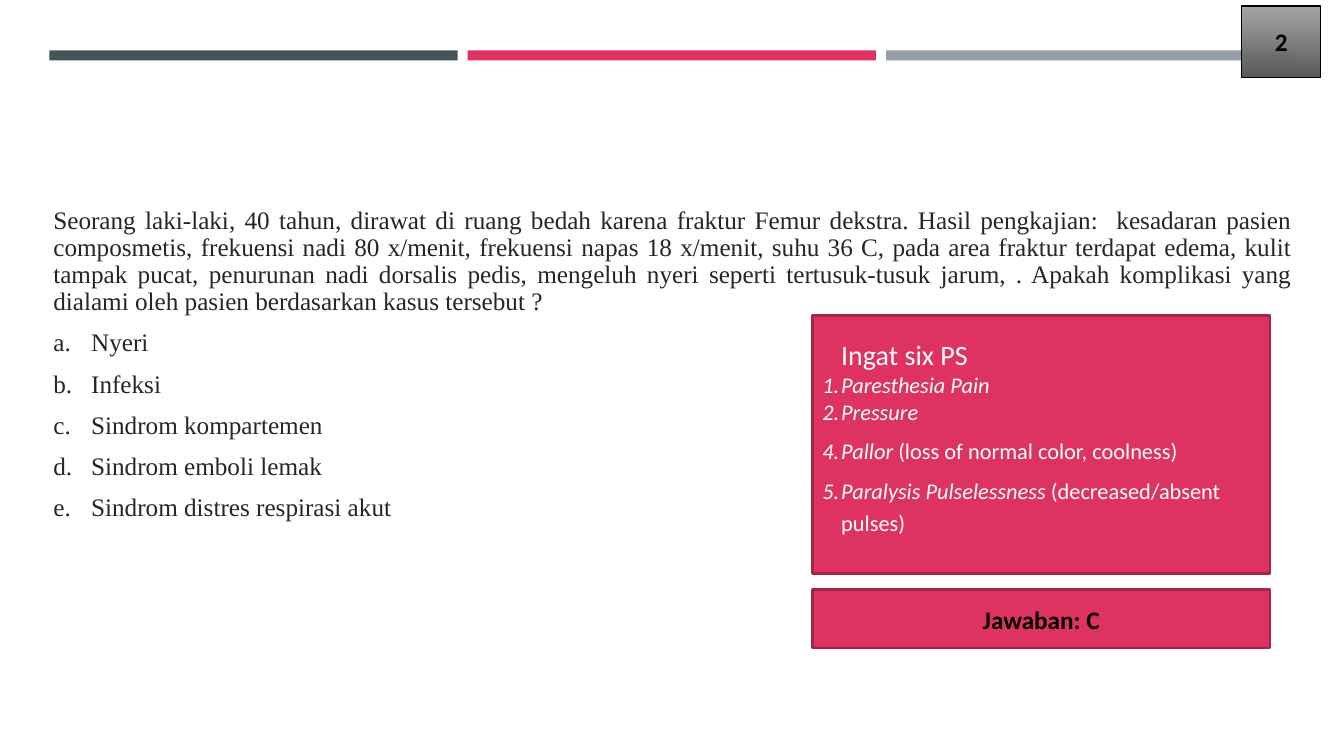
from dataclasses import dataclass
from typing import Any, NamedTuple

from pptx import Presentation
from pptx import util as u
from pptx.dml.color import RGBColor
from pptx.enum import shapes, text
from pptx.oxml.ns import qn
from lxml import etree

SLATE = RGBColor(0x46, 0x53, 0x59)
PINK = RGBColor(0xDE, 0x32, 0x61)
DARK_PINK = RGBColor(0xA4, 0x25, 0x48)
GREY = RGBColor(0x96, 0x9F, 0xA7)
LIGHT_GREY = RGBColor(0x9B, 0x9B, 0x9B)
DARK_GREY = RGBColor(0x59, 0x59, 0x59)
INK = RGBColor(0x26, 0x26, 0x26)
BLACK = RGBColor(0, 0, 0)
WHITE = RGBColor(0xFF, 0xFF, 0xFF)

BAR_LEFT, BAR_TOP, BAR_WIDTH, BAR_HEIGHT, BAR_STEP = 35.3, 36, 291.6, 7.2, 298.8
CARD_LEFT, CARD_WIDTH = 580.3, 326.9

CASE = (
    "Seorang laki-laki, 40 tahun, dirawat di ruang bedah karena fraktur Femur dekstra. "
    "Hasil pengkajian:  kesadaran pasien composmetis, frekuensi nadi 80 x/menit, "
    "frekuensi napas 18 x/menit, suhu 36 C, pada area fraktur terdapat edema, kulit "
    "tampak pucat, penurunan nadi dorsalis pedis, mengeluh nyeri seperti tertusuk-tusuk "
    "jarum, . Apakah komplikasi yang dialami oleh pasien berdasarkan kasus tersebut ?"
)
OPTIONS = ["Nyeri", "Infeksi", "Sindrom kompartemen", "Sindrom emboli lemak",
           "Sindrom distres respirasi akut"]


class Area(NamedTuple):
    left: float
    top: float
    width: float
    height: float

    def points(self) -> list[u.Length]:
        return [u.Pt(value) for value in self]


class Span(NamedTuple):
    words: str
    font: dict[str, Any]


@dataclass
class Line:
    spans: list[Span]
    layout: dict[str, Any]
    margin: float = 0
    hanging: float = 0
    numbering: str = ""
    start: int = 1


def add_rectangle(page: Any, area: Area, fill: RGBColor | None = None,
                  line: RGBColor | None = None, weight: float = 1) -> Any:
    box = page.shapes.add_shape(shapes.MSO_SHAPE.RECTANGLE, *area.points())
    box.shadow.inherit = False
    if fill is not None:
        box.fill.solid()
        box.fill.fore_color.rgb = fill
    if line is None:
        box.line.fill.background()
    else:
        box.line.color.rgb = line
        box.line.width = u.Pt(weight)
    return box


def shade_number_box(box: Any) -> None:
    """Fill from light grey, slightly see-through, down to dark grey."""
    box.fill.gradient()
    box.fill.gradient_angle = 270
    for stop, colour in zip(box.fill.gradient_stops, (LIGHT_GREY, DARK_GREY)):
        stop.color.rgb = colour
    light = box.element.xpath(".//a:gs[1]/a:srgbClr")[0]
    etree.SubElement(light, qn("a:alpha"), val="90000")


def write_lines(box: Any, lines: list[Line], bottom: float = 3.6) -> None:
    frame = box.text_frame
    frame.word_wrap = True
    frame.vertical_anchor = text.MSO_ANCHOR.MIDDLE
    frame.margin_bottom = u.Pt(bottom)
    for index, line in enumerate(lines):
        para = frame.add_paragraph() if index else frame.paragraphs[0]
        for name, value in line.layout.items():
            setattr(para, name, value)
        properties = para._p.get_or_add_pPr()
        properties.set("marL", str(u.Pt(line.margin)))
        properties.set("indent", str(u.Pt(-line.hanging)))
        if line.numbering:
            etree.SubElement(properties, qn("a:buAutoNum"),
                             type=line.numbering, startAt=str(line.start))
        for words, font in line.spans:
            run = para.add_run()
            run.text = words
            for name, value in font.items():
                if name == "color":
                    run.font.color.rgb = value
                else:
                    setattr(run.font, name, value)


def add_bars(page: Any) -> None:
    for index, colour in enumerate((SLATE, PINK, GREY)):
        left = BAR_LEFT + index * BAR_STEP
        add_rectangle(page, Area(left, BAR_TOP, BAR_WIDTH, BAR_HEIGHT), colour)


def add_question(page: Any) -> None:
    font = {"name": "Times New Roman", "size": u.Pt(18), "color": INK}
    layout = {"alignment": text.PP_ALIGN.JUSTIFY, "line_spacing": 0.9,
              "space_before": u.Pt(10)}
    lines = [Line([Span(CASE, font)], layout)]
    lines += [Line([Span(option, font)], layout, 27, 27, "alphaLcPeriod")
              for option in OPTIONS]
    box = page.shapes.add_textbox(*Area(31, 41, 899.3, 439.2).points())
    write_lines(box, lines)


def add_reminder(page: Any) -> None:
    plain = {"name": "Calibri", "size": u.Pt(16), "color": WHITE, "italic": False}
    italic = plain | {"italic": True}
    heading = plain | {"size": u.Pt(20)}
    tight = {"alignment": text.PP_ALIGN.LEFT}
    loose = tight | {"line_spacing": 1.2, "space_before": u.Pt(5)}
    indent, style = 13.5, "arabicPeriod"
    lines = [
        Line([Span("Ingat six PS", heading)], tight, indent),
        Line([Span("Paresthesia Pain", italic)], tight, indent, indent, style),
        Line([Span("Pressure", italic)], tight, indent, indent, style),
        Line([Span("Pallor ", italic), Span("(loss of normal color, coolness)", plain)],
             loose, indent, indent, style, 4),
        Line([Span("Paralysis Pulselessness ", italic),
              Span("(decreased/absent pulses)", plain)],
             loose, indent, indent, style, 4),
    ]
    box = add_rectangle(page, Area(CARD_LEFT, 225.4, CARD_WIDTH, 184.3),
                        PINK, DARK_PINK, 1.75)
    write_lines(box, lines, bottom=14.6)


def write_label(box: Any, words: str) -> None:
    font = {"name": "Calibri", "size": u.Pt(18), "color": BLACK, "bold": True}
    write_lines(box, [Line([Span(words, font)], {"alignment": text.PP_ALIGN.CENTER})])


def main() -> None:
    deck = Presentation()
    deck.slide_width, deck.slide_height = u.Pt(960), u.Pt(540)
    page = deck.slides.add_slide(deck.slide_layouts[6])
    add_bars(page)
    add_question(page)
    number_box = add_rectangle(page, Area(887, 4.3, 56.2, 51.1), line=BLACK)
    shade_number_box(number_box)
    write_label(number_box, "2")
    add_reminder(page)
    answer_box = add_rectangle(page, Area(CARD_LEFT, 421.2, CARD_WIDTH, 41.8),
                               PINK, DARK_PINK, 1.75)
    write_label(answer_box, "Jawaban: C")
    deck.save("out.pptx")


if __name__ == "__main__":
    main()
